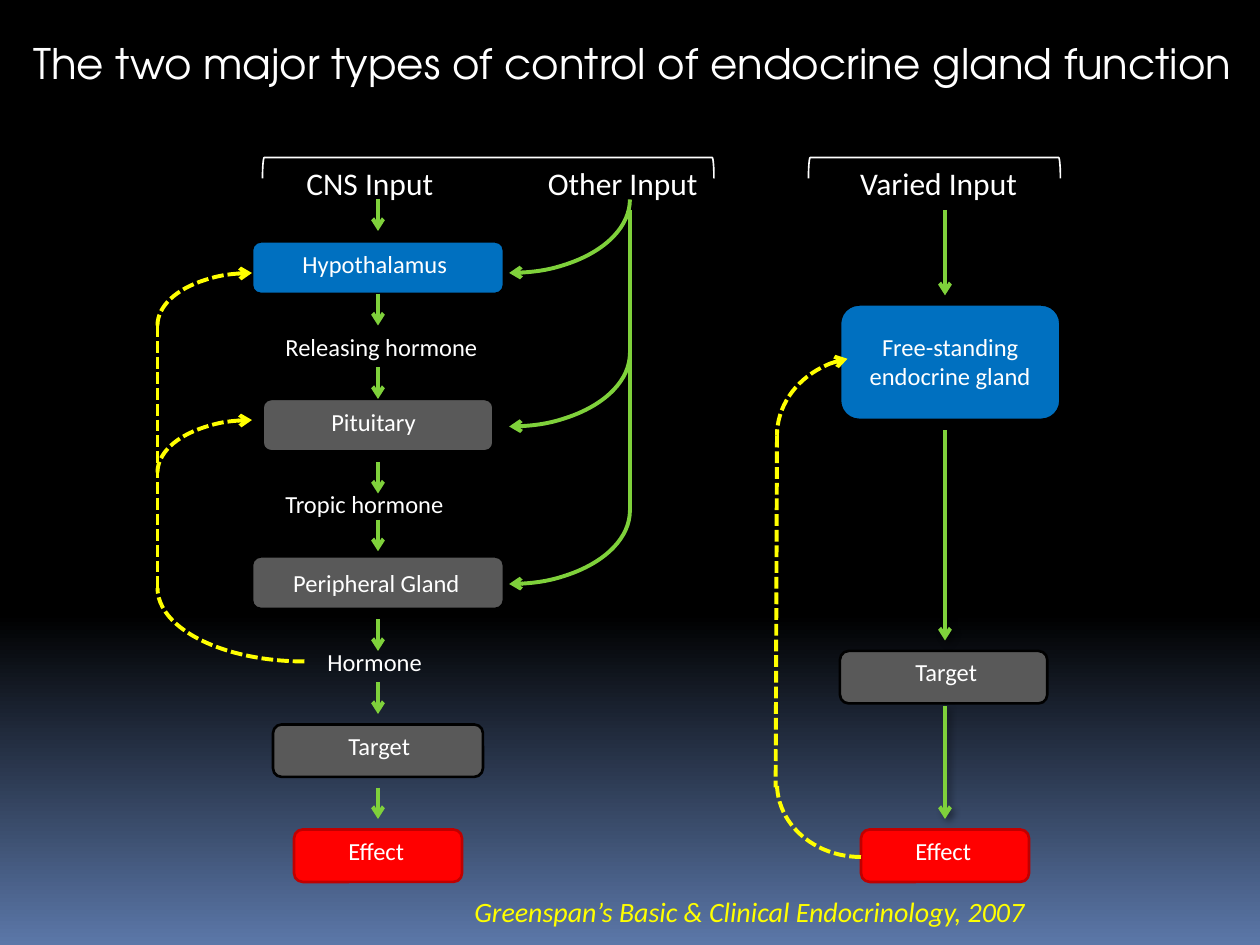
"""Build a slide comparing two types of endocrine gland control."""
from dataclasses import dataclass
from typing import Optional

from lxml.etree import SubElement
from pptx import Presentation
from pptx.dml.color import RGBColor
from pptx.enum.dml import MSO_LINE
from pptx.enum.shapes import MSO_CONNECTOR, MSO_SHAPE as Shp
from pptx.enum.text import MSO_AUTO_SIZE, PP_ALIGN
from pptx.oxml.ns import qn
from pptx.util import Emu, Pt


@dataclass(frozen=True)
class Theme:
    black: str = "000000"
    sky: str = "5B77A8"
    white: str = "FFFFFF"
    green: str = "7FD13B"
    yellow: str = "FFFF00"
    blue: str = "0070C0"
    gray: str = "595959"
    red: str = "FF0000"
    dark_red: str = "C00000"
    body_font: str = "Calibri"
    title_font: str = "TeX Gyre Adventor"
    title: int = 24
    heading: int = 18
    source: int = 16
    label: int = 14
    flow_line: float = 2.25
    box_line: float = 1.5
    bracket_line: float = 0.94


T = Theme()
EMU_PER_PX = 9525


@dataclass(frozen=True)
class Box:
    x: int
    y: int
    w: int
    h: int
    fill: str
    line: str = T.black


@dataclass(frozen=True)
class Label:
    text: str
    x: int
    y: int
    w: int
    h: int = 33
    size: int = T.label
    color: str = T.white
    font: str = T.body_font
    italic: bool = False
    centered: bool = False


@dataclass(frozen=True)
class Bracket:
    x: int
    y: int
    w: int
    depth: int = 16


@dataclass(frozen=True)
class Line:
    x1: int
    y1: int
    x2: int
    y2: int
    color: str = T.green
    arrow: bool = True
    shadow: bool = False


@dataclass(frozen=True)
class Arc:
    x: int
    y: int
    w: int
    h: int
    flip: str
    color: str = T.yellow
    arrow: bool = True
    start: Optional[float] = None


def px(n: float) -> Emu:
    return Emu(int(n * EMU_PER_PX))


def rgb(value: str) -> RGBColor:
    return RGBColor.from_string(value)


def style_line(sp, color: str, width: float, end: str = "") -> None:
    sp.line.color.rgb = rgb(color)
    sp.line.width = Pt(width)
    if color == T.yellow:
        sp.line.dash_style = MSO_LINE.SQUARE_DOT
    if end:
        SubElement(sp.line._get_or_add_ln(), qn(f"a:{end}"), type="arrow")


def add_outline(s, kind: Shp, x: float, y: float, w: int, h: int):
    sp = s.shapes.add_shape(kind, px(x), px(y), px(w), px(h))
    sp.shadow.inherit = False
    sp.fill.background()
    return sp


def draw_box(s, b: Box) -> None:
    sp = add_outline(s, Shp.ROUNDED_RECTANGLE, b.x, b.y, b.w, b.h)
    sp.fill.solid()
    sp.fill.fore_color.rgb = rgb(b.fill)
    style_line(sp, b.line, T.box_line)


def draw_label(s, t: Label) -> None:
    tf = s.shapes.add_textbox(px(t.x), px(t.y), px(t.w), px(t.h)).text_frame
    tf.word_wrap = True
    tf.auto_size = MSO_AUTO_SIZE.SHAPE_TO_FIT_TEXT
    p = tf.paragraphs[0]
    if t.centered:
        p.alignment = PP_ALIGN.CENTER
    r = p.add_run()
    r.text = t.text
    r.font.name, r.font.size = t.font, Pt(t.size)
    r.font.color.rgb = rgb(t.color)
    if t.italic:
        r.font.italic = True


def draw_bracket(s, b: Bracket) -> None:
    x = b.x + (b.w - b.depth) / 2
    y = b.y + (b.depth - b.w) / 2
    sp = add_outline(s, Shp.RIGHT_BRACKET, x, y, b.depth, b.w)
    sp.rotation = 270
    style_line(sp, T.white, T.bracket_line)


def draw_line(s, c: Line) -> None:
    sp = s.shapes.add_connector(
        MSO_CONNECTOR.STRAIGHT, px(c.x1), px(c.y1), px(c.x2), px(c.y2))
    style_line(sp, c.color, T.flow_line, "tailEnd" if c.arrow else "")
    effects = SubElement(sp._element.spPr, qn("a:effectLst"))
    if c.shadow:
        shadow = SubElement(effects, qn("a:outerShdw"), blurRad=str(Pt(4)),
                            dist=str(Pt(3)), dir="2700000")
        color = SubElement(shadow, qn("a:srgbClr"), val=T.black)
        SubElement(color, qn("a:alpha"), val="40000")


def draw_arc(s, a: Arc) -> None:
    sp = add_outline(s, Shp.ARC, a.x, a.y, a.w, a.h)
    for axis in a.flip:
        sp._element.spPr.xfrm.set(f"flip{axis}", "1")
    if a.start is not None:
        sp.adjustments[0] = a.start
    style_line(sp, a.color, T.flow_line, "headEnd" if a.arrow else "")


BOXES = [
    Box(192, 184, 192, 40, T.blue),
    Box(200, 304, 176, 40, T.gray),
    Box(192, 424, 192, 40, T.gray),
    Box(208, 552, 160, 40, T.gray),
    Box(224, 632, 128, 40, T.red, T.dark_red),
    Box(640, 232, 168, 88, T.blue),
    Box(640, 496, 158, 40, T.gray),
    Box(656, 632, 128, 40, T.red, T.dark_red),
]
LABELS = [
    Label("The two major types of control of endocrine gland function",
          16, 24, 936, 49, T.title, font=T.title_font),
    Label("CNS Input", 224, 120, 168, 40, T.heading),
    Label("Other Input", 408, 120, 168, 40, T.heading),
    Label("Varied Input", 646, 120, 200, 40, T.heading),
    Label("Hypothalamus", 221, 185, 176),
    Label("Releasing hormone", 208, 248, 216),
    Label("Pituitary", 243, 305, 136),
    Label("Tropic hormone", 208, 368, 216),
    Label("Peripheral Gland", 214, 428, 192),
    Label("Hormone", 240, 488, 160),
    Label("Target", 256, 552, 88),
    Label("Effect", 256, 632, 104),
    Label("Free-standing endocrine gland", 648, 248, 152, 55, centered=True),
    Label("Target", 688, 496, 88),
    Label("Effect", 688, 632, 104),
    Label("Greenspan’s Basic & Clinical Endocrinology, 2007",
          352, 677, 496, 36, T.source, T.yellow, italic=True),
]
BRACKETS = [Bracket(200, 120, 344), Bracket(616, 120, 192)]
LINES = [
    *(Line(288, y, 288, y + 24) for y in (152, 224, 280, 352, 396, 472, 520, 600)),
    *(Line(720, top, 720, bottom, shadow=True)
      for top, bottom in ((160, 225), (328, 488), (538, 624))),
    Line(480, 160, 480, 389, arrow=False),
    Line(120, 248, 120, 448, T.yellow, arrow=False),
    Line(592, 332, 591, 600, T.yellow, arrow=False),
]
ARCS = [
    *(Arc(296, y, 184, 112, "V", T.green) for y in (96, 213, 333)),
    *(Arc(120, y, 144, 80, "H") for y in (208, 320)),
    Arc(120, 392, 224, 112, "HV", arrow=False),
    Arc(592, 541, 128, 112, "HV", arrow=False),
    Arc(592, 272, 136, 120, "H", start=170.185),
]


def main() -> None:
    prs = Presentation()
    prs.slide_width, prs.slide_height = px(960), px(720)
    s = prs.slides.add_slide(prs.slide_layouts[6])
    fill = s.background.fill
    fill.gradient()
    fill.gradient_angle = 270
    for stop, (pos, color) in zip(fill.gradient_stops, ((0.65, T.black), (1, T.sky))):
        stop.position = pos
        stop.color.rgb = rgb(color)
    for draw, items in ((draw_box, BOXES), (draw_bracket, BRACKETS), (draw_line, LINES),
                        (draw_arc, ARCS), (draw_label, LABELS)):
        for item in items:
            draw(s, item)
    prs.save("out.pptx")


if __name__ == "__main__":
    main()
